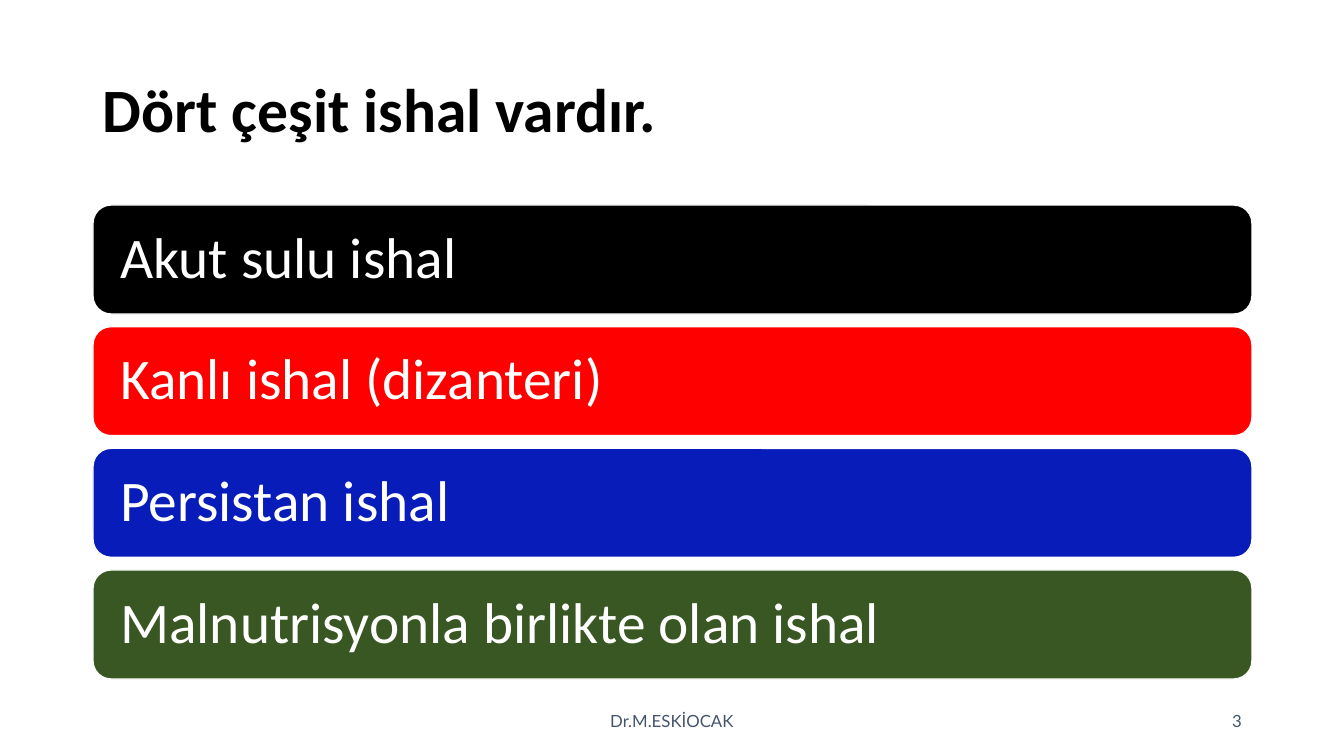
from pptx import Presentation
from pptx import util as u
from pptx.dml.color import RGBColor
from pptx.enum import shapes, text

# Content
TITLE = "Dört çeşit ishal vardır."
DIARRHEA_TYPES = [
    ("Akut sulu ishal", "000000"),
    ("Kanlı ishal (dizanteri)", "FF0000"),
    ("Persistan ishal", "071CB9"),
    ("Malnutrisyonla birlikte olan ishal", "385723"),
]
AUTHOR = "Dr.M.ESKİOCAK"
PAGE = "3"

THEME = {
    "ink": "000000", "paper": "FFFFFF", "muted": "44546A",
    "body_font": "Calibri", "footer_font": "Lato",
    "title_size": 44, "bar_size": 41, "footer_size": 12,
}

# Layout in px
SLIDE_W, SLIDE_H = 1344, 756
LEFT, WIDTH = 93, 1159
TITLE_TOP, TITLE_H = 40, 146
BARS_TOP, BARS_H, BAR_H = 205, 474, 109
BAR_INSET = 22
FOOTER_TOP, FOOTER_H = 701, 40
AUTHOR_W, PAGE_W = 454, 302


def px(n):
    return u.Emu(round(n * 914400 / 100.8))


def rgb(code):
    return RGBColor.from_string(code)


def write(holder, words, *, size, color, font=THEME["body_font"], bold=False,
          align=text.PP_ALIGN.LEFT, spacing=1.0, inset=10):
    frame = holder.text_frame
    frame.word_wrap = True
    frame.vertical_anchor = text.MSO_ANCHOR.MIDDLE
    frame.margin_left = frame.margin_right = px(inset)
    frame.margin_top = frame.margin_bottom = px(5)
    line = frame.paragraphs[0]
    line.alignment = align
    line.line_spacing = spacing
    run = line.add_run()
    run.text = words
    run.font.name = font
    run.font.size = u.Pt(size)
    run.font.bold = bold
    run.font.color.rgb = rgb(color)


deck = Presentation()
deck.slide_width, deck.slide_height = px(SLIDE_W), px(SLIDE_H)
slide = deck.slides.add_slide(deck.slide_layouts[6])

# Title
title = slide.shapes.add_textbox(px(LEFT), px(TITLE_TOP), px(WIDTH), px(TITLE_H))
write(title, TITLE, size=THEME["title_size"], color=THEME["ink"], bold=True, spacing=0.9)

# One bar for each type, evenly spread over the bar area
pitch = (BARS_H - BAR_H) / (len(DIARRHEA_TYPES) - 1)
for i, (label, color) in enumerate(DIARRHEA_TYPES):
    bar = slide.shapes.add_shape(shapes.MSO_SHAPE.ROUNDED_RECTANGLE, px(LEFT),
                                 px(BARS_TOP + i * pitch), px(WIDTH), px(BAR_H))
    bar.shadow.inherit = False
    bar.fill.solid()
    bar.fill.fore_color.rgb = rgb(color)
    bar.line.color.rgb = rgb(THEME["paper"])
    bar.line.width = u.Pt(1)
    write(bar, label, size=THEME["bar_size"], color=THEME["paper"],
          spacing=0.9, inset=BAR_INSET)

# Footer: author in the centre, page number at the right edge of the bars
for words, left, width, align in [
    (AUTHOR, (SLIDE_W - AUTHOR_W) / 2, AUTHOR_W, text.PP_ALIGN.CENTER),
    (PAGE, LEFT + WIDTH - PAGE_W, PAGE_W, text.PP_ALIGN.RIGHT),
]:
    footer = slide.shapes.add_textbox(px(left), px(FOOTER_TOP), px(width), px(FOOTER_H))
    write(footer, words, size=THEME["footer_size"], color=THEME["muted"],
          font=THEME["footer_font"], align=align)

deck.save("out.pptx")
